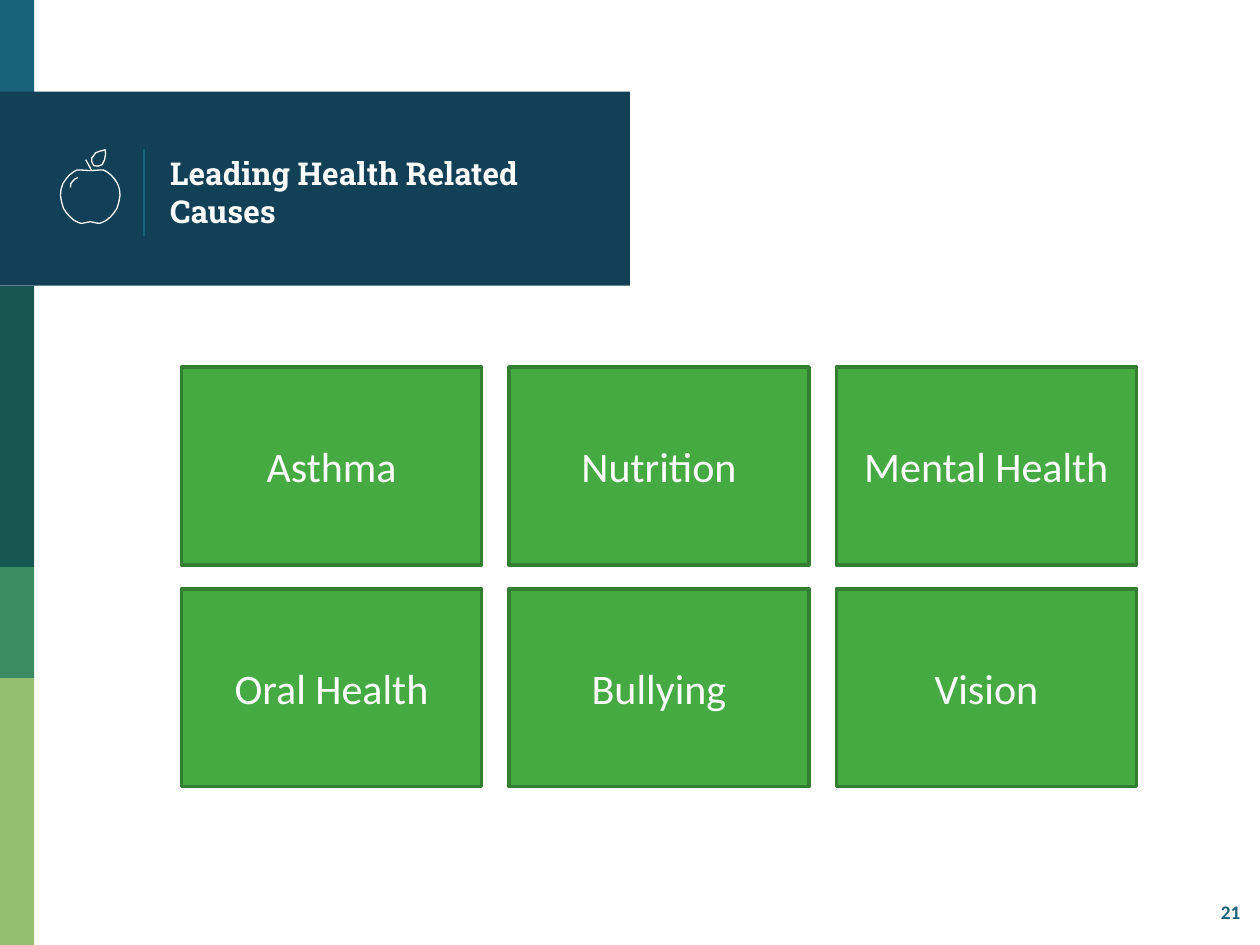
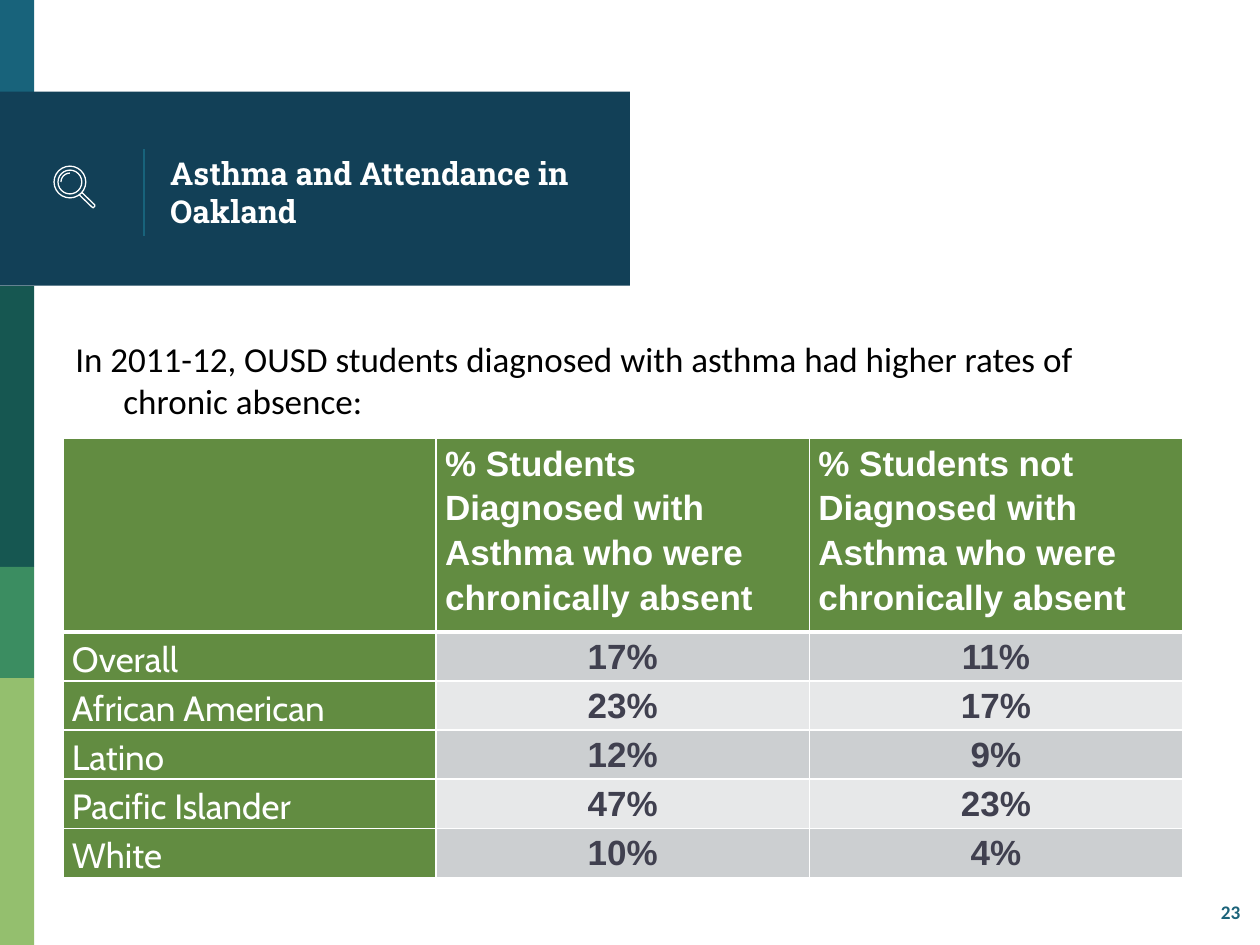
import math
import pptx
import pptx.util
import pptx.dml.color
import pptx.enum.shapes
import pptx.enum.text
import pptx.oxml
import pptx.oxml.ns
import pptx.oxml.xmlchemy

KIND = pptx.enum.shapes.MSO_SHAPE
ALIGN = pptx.enum.text.PP_ALIGN
MIDDLE = pptx.enum.text.MSO_ANCHOR.MIDDLE

# Shared colours and formats
WHITE, NAVY, BLUE = "FFFFFF", "124057", "18637B"
CARD, EDGE, LEAF = "45AA42", "337E31", "628C41"
GREYS = ("CCCFD1", "E7E8E9")
BANDS = ((0, 0, 0.69, 1.96, BLUE), (0, 1.85, 12.7, 3.91, NAVY),
         (0, 5.77, 0.69, 5.66, "165751"), (0, 11.43, 0.69, 2.24, "3B8D61"),
         (0, 13.67, 0.69, 5.38, "94BF6E"))
TITLE = {"name": "Roboto Slab", "size": pptx.util.Pt(18), "bold": True}
PAGE = {"name": "Calibri", "size": pptx.util.Pt(11), "bold": True}
LABEL = {"name": "Calibri", "size": pptx.util.Pt(24)}
INTRO = {"name": "Calibri", "size": pptx.util.Pt(20)}
HEAD = {"name": "Arial", "size": pptx.util.Pt(20), "bold": True}
GROUP = {"name": "Cabin", "size": pptx.util.Pt(20), "bold": False}
SIDES = ("margin_left", "margin_right", "margin_top", "margin_bottom")
PAD = {**dict.fromkeys(SIDES, pptx.util.Cm(0.25)), "word_wrap": True}
CELL = {**dict.fromkeys(SIDES[:2], pptx.util.Cm(0.18)),
        **dict.fromkeys(SIDES[2:], 0)}

# Half of the apple outline, from top to bottom, and its details
HALF = ((0, 0.42), (0.16, 0.41), (0.27, 0.41), (0.33, 0.44), (0.42, 0.51),
        (0.49, 0.59), (0.55, 0.68), (0.59, 0.8), (0.6, 0.92), (0.58, 1.04),
        (0.54, 1.18), (0.48, 1.27), (0.41, 1.35), (0.33, 1.42), (0.25, 1.46),
        (0.2, 1.48), (0.15, 1.48), (0, 1.45))
STEM = ((0.03, 0.42), (-0.09, 0.2))
BLADE = ((0.06, 0.13), (0.11, 0.06), (0.19, 0.03), (0.3, 0), (0.31, 0.08),
         (0.29, 0.2), (0.24, 0.3), (0.16, 0.33), (0.07, 0.32), (0.03, 0.24),
         (0.03, 0.16))
SHINE = ((-0.25, 0.56), (-0.31, 0.59), (-0.36, 0.64), (-0.39, 0.68),
         (-0.4, 0.76))
HANDLE = ((0.19, 0.26), (0.44, 0.5), (0.47, 0.52), (0.5, 0.49),
          (0.5, 0.46), (0.24, 0.21))


def rgb(code):
    return pptx.dml.color.RGBColor.from_string(code)


def put(item, form):
    for key, value in form.items():
        setattr(item, key, value)


def write(area, text, form, color, align=ALIGN.LEFT):
    """Fill a text frame with one formatted paragraph."""
    para = area.paragraphs[0]
    para.alignment = align
    run = para.add_run()
    run.text = text
    put(run.font, form)
    run.font.color.rgb = rgb(color)
    return para


def paint(shape, fill=None, line=None, width=0.75):
    shape.shadow.inherit = False
    if fill:
        shape.fill.solid()
        shape.fill.fore_color.rgb = rgb(fill)
    else:
        shape.fill.background()
    if line:
        shape.line.color.rgb = rgb(line)
        shape.line.width = pptx.util.Pt(width)
    else:
        shape.line.fill.background()


def block(slide, kind, box, **look):
    shape = slide.shapes.add_shape(kind, *map(pptx.util.Cm, box))
    paint(shape, **look)
    return shape


def trace(slide, x, y, points, close=False):
    """Draw a white outline through points given relative to x, y."""
    spots = [(pptx.util.Cm(x + dx), pptx.util.Cm(y + dy)) for dx, dy in points]
    pen = slide.shapes.build_freeform(*spots[0])
    pen.add_line_segments(spots[1:], close=close)
    paint(pen.convert_to_shape(), line=WHITE)


# Icons
def apple(slide, x, y):
    left = tuple((-dx, dy) for dx, dy in HALF[-2:0:-1])
    trace(slide, x, y, BLADE, close=True)
    trace(slide, x, y, HALF + left, close=True)
    trace(slide, x, y, STEM)
    trace(slide, x, y, SHINE)


def lens(slide, x, y):
    x, y = x - 0.41, y + 0.65
    for rad in (0.32, 0.24):
        block(slide, KIND.OVAL, (x - rad, y - rad, 2 * rad, 2 * rad), line=WHITE)
    turns = [math.radians(180 + 15 * step) for step in range(7)]
    trace(slide, x, y, [(0.18 * math.cos(t), 0.18 * math.sin(t)) for t in turns])
    trace(slide, x, y, HANDLE)


# Shared frame: bands, rule, title, icon and page number
def frame(deck, title, page, icon):
    slide = deck.slides.add_slide(deck.slide_layouts[5])
    head = slide.shapes.title
    for *box, color in BANDS:
        block(slide, KIND.RECTANGLE, box, fill=color)
    rule = slide.shapes.add_connector(
        pptx.enum.shapes.MSO_CONNECTOR.STRAIGHT,
        *map(pptx.util.Cm, (2.9, 3, 2.9, 4.75)))
    rule.line.color.rgb = rgb(BLUE)
    rule.line.width = pptx.util.Pt(0.75)
    rule._element.spPr.append(pptx.oxml.xmlchemy.OxmlElement("a:effectLst"))
    note = slide.shapes.add_textbox(*map(pptx.util.Cm, (24.36, 18.03, 1.27, 0.74)))
    write(note.text_frame, page, PAGE, "1B637A")

    # Bring the title above the bands
    slide.shapes._spTree.append(head._element)
    put(head, {"left": pptx.util.Cm(3.18), "top": pptx.util.Cm(1.96),
               "width": pptx.util.Cm(8.92), "height": pptx.util.Cm(3.81)})
    put(head.text_frame, {**PAD, "vertical_anchor": MIDDLE,
                          "auto_size": pptx.enum.text.MSO_AUTO_SIZE.NONE})
    write(head.text_frame, title, TITLE, WHITE)
    icon(slide, 1.82, 3.02)
    return slide


# Grid of labelled cards
def cards(slide, box, names, cols=3, gap=(0.55, 0.48)):
    x, y, wide, high = box
    rows = math.ceil(len(names) / cols)
    w = (wide - gap[0] * (cols - 1)) / cols
    h = (high - gap[1] * (rows - 1)) / rows
    for i, name in enumerate(names):
        row, col = divmod(i, cols)
        spot = (x + col * (w + gap[0]), y + row * (h + gap[1]), w, h)
        card = block(slide, KIND.RECTANGLE, spot, fill=CARD, line=EDGE, width=2)
        put(card.text_frame, {"word_wrap": True, "vertical_anchor": MIDDLE})
        write(card.text_frame, name, LABEL, WHITE, ALIGN.CENTER)


# Lead sentence with a hanging indent
def intro(slide, box, text):
    area = slide.shapes.add_textbox(*map(pptx.util.Cm, box))
    put(area.text_frame, PAD)
    props = write(area.text_frame, text, INTRO, "000000")._p.get_or_add_pPr()
    props.set("marL", str(pptx.util.Cm(0.97)))
    props.set("indent", str(-pptx.util.Cm(0.97)))


def border(cell, base):
    props = cell._tc.get_or_add_tcPr()
    for side in "LRTB":
        width = pptx.util.Pt(base if side == "B" else 1)
        props.append(pptx.oxml.parse_xml(
            f'<a:ln{side} {pptx.oxml.ns.nsdecls("a")} w="{width}">'
            f'<a:solidFill><a:srgbClr val="{WHITE}"/></a:solidFill></a:ln{side}>'))


# Table with a header row and a header column
def grid(slide, box, data, top=3.6):
    wide, high = box[2:]
    table = slide.shapes.add_table(
        len(data), len(data[0]), *map(pptx.util.Cm, box)).table
    for col in table.columns:
        col.width = pptx.util.Cm(wide / len(data[0]))
    for r, row in enumerate(data):
        tall = (high - top) / (len(data) - 1) if r else top
        table.rows[r].height = pptx.util.Cm(tall)
        for c, text in enumerate(row):
            cell = table.cell(r, c)
            put(cell, CELL)
            border(cell, 1 if r else 3)
            value = r > 0 and c > 0
            cell.fill.solid()
            cell.fill.fore_color.rgb = rgb(GREYS[(r - 1) % 2] if value else LEAF)
            if text:
                para = write(cell.text_frame, text, HEAD if c else GROUP,
                             "40404F" if value else WHITE,
                             ALIGN.CENTER if value else ALIGN.LEFT)
                para.line_spacing = 1.15


def main():
    deck = pptx.Presentation()
    put(deck, {"slide_width": pptx.util.Cm(25.4),
               "slide_height": pptx.util.Cm(19.05)})

    # Causes
    slide = frame(deck, "Leading Health Related Causes", "21", apple)
    cards(slide, (3.66, 7.4, 19.25, 8.46),
          ("Asthma", "Nutrition", "Mental Health",
           "Oral Health", "Bullying", "Vision"))

    # Asthma and attendance
    slide = frame(deck, "Asthma and Attendance in Oakland", "23", lens)
    intro(slide, (1.27, 6.55, 21.6, 2.3),
          "In 2011-12, OUSD students diagnosed with asthma had higher rates "
          "of chronic absence:")
    grid(slide, (1.27, 8.84, 22.57, 8.55), (
        ("", "% Students Diagnosed with Asthma who were chronically absent",
         "% Students not Diagnosed with Asthma who were chronically absent"),
        ("Overall", "17%", "11%"),
        ("African American", "23%", "17%"),
        ("Latino", "12%", "9%"),
        ("Pacific Islander", "47%", "23%"),
        ("White", "10%", "4%")))
    deck.save("out.pptx")


if __name__ == "__main__":
    main()
